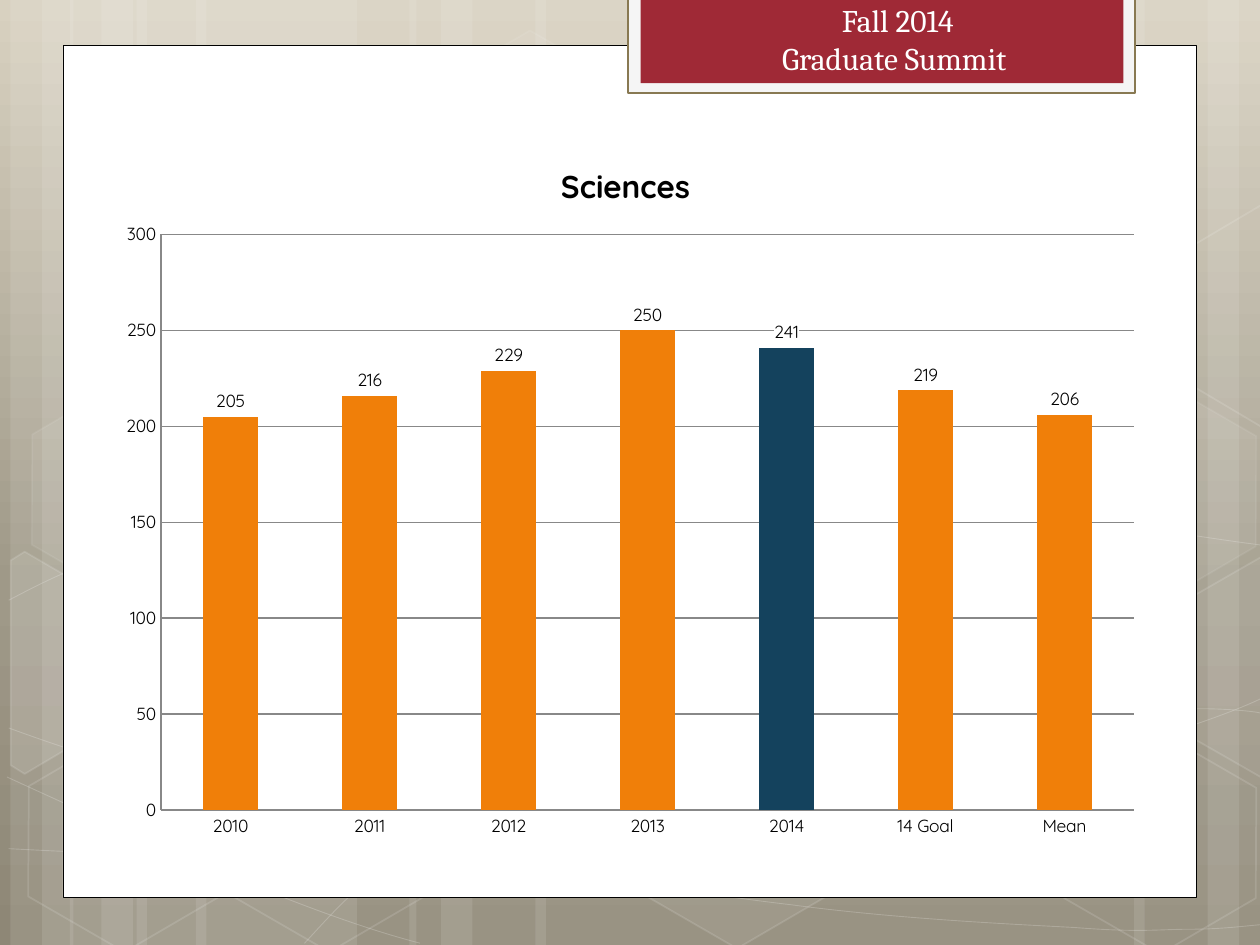
import copy
import math
from dataclasses import dataclass

import pptx
import pptx.chart.data
import pptx.dml.color
import pptx.enum.chart
import pptx.enum.shapes
import pptx.enum.text
import pptx.oxml
import pptx.oxml.ns
import pptx.util

Pt = pptx.util.Pt
qn = pptx.oxml.ns.qn
SHAPES = pptx.enum.shapes.MSO_SHAPE


@dataclass(frozen=True)
class Theme:
    white: str = "FFFFFF"
    black: str = "000000"
    frame: str = "F5F5F5"
    frame_line: str = "887952"
    ribbon: str = "9F2936"
    bar: str = "F07F09"
    highlight: str = "14425D"
    grid: str = "888888"
    backdrop: tuple = ((0, "D8D1C0"), (0.62, "9F9988"), (1, "8E8776"))
    heading_font: str = "Cambria"
    chart_font: str = "Quicksand"
    heading_size: int = 18
    chart_size: int = 10


THEME = Theme()
TILT = 30

# Backdrop geometry in points: left and width, turned by half a circle or not
BANDS = [(78, 126, 0), (6, 36, 0), (24, 60, 0), (112, 126, 0), (40, 36, 0), (58, 60, 0),
         (528, 126, 180), (690, 36, 180), (648, 60, 180),
         (306, 222, 0), (234, 36, 0), (252, 60, 0)]
# Each curve: a start point, then three points (control, control, end) per segment
CURVES = [
    [(5, 485), (44, 487), (83, 489), (137, 488), (191, 487), (258, 486), (330, 479),
     (402, 472), (504, 458), (570, 444), (636, 431), (703, 409), (725, 397)],
    [(5, 343), (26, 332), (47, 321), (87, 310), (128, 300), (186, 283), (250, 279),
     (314, 274), (392, 273), (471, 279), (550, 284), (682, 307), (725, 312)],
    [(4, 444), (91, 484), (178, 523), (240, 539)],
    [(5, 416), (27, 424), (50, 432), (92, 444), (134, 454), (197, 472), (257, 485),
     (317, 497), (392, 510), (452, 517), (512, 525), (576, 528), (614, 530),
     (652, 533), (662, 531), (680, 531), (699, 531), (712, 529), (725, 528)],
    [(174, 539), (187, 525), (200, 510), (217, 498), (235, 485), (259, 470), (279, 460),
     (300, 450), (312, 446), (338, 438), (364, 431), (413, 421), (438, 416),
     (464, 411), (467, 411), (490, 410), (512, 408), (547, 405), (572, 405),
     (597, 404), (638, 405), (638, 405), (654, 405), (670, 405), (686, 405),
     (699, 405), (711, 406), (718, 407), (722, 408), (722, 407), (724, 408)],
]
# left, top, fill opacity (None: no fill), line opacity
HEXAGONS = [(240, 26, 4, 8), (358, 424, 6, 12), (8, 426, None, 12),
            (10, 225, 7, 8), (125, 426, None, 12), (542, 326, 10, 12),
            (600, 427, None, 12), (600, 226, 7, 8)]
# Hexagons cut off by the slide edge: centre, corners as seen, fill opacity
CUT_HEXAGONS = [
    ((26, 385), [(6, 320), (14, 315), (69, 347), (68, 410), (14, 442), (6, 437)], 10),
    ((709, 374.5), [(667, 349), (721, 318), (726, 321), (726, 441), (721, 444),
                    (667, 413)], 4),
    ((709, 173.5), [(667, 149), (721, 117), (727, 121), (726, 241), (721, 244),
                    (667, 212)], None),
]


def rgb(value):
    return pptx.dml.color.RGBColor.from_string(value)


def set_opacity(parent, percent):
    color = parent.find(qn("a:solidFill")).find(qn("a:srgbClr"))
    color.append(color.makeelement(qn("a:alpha"), {"val": str(percent * 1000)}))


def style(shape, fill=None, line=None, width=1, fill_opacity=100, line_opacity=100):
    """Give a shape its fill and line; None leaves that part out."""
    shape.shadow.inherit = False
    properties = shape._element.spPr
    if fill and fill_opacity:
        shape.fill.solid()
        shape.fill.fore_color.rgb = rgb(fill)
        if fill_opacity < 100:
            set_opacity(properties, fill_opacity)
    else:
        shape.fill.background()
    if line:
        shape.line.color.rgb = rgb(line)
        shape.line.width = Pt(width)
        if line_opacity < 100:
            set_opacity(properties.find(qn("a:ln")), line_opacity)
    else:
        shape.line.fill.background()


def add_box(slide, kind, box, **look):
    shape = slide.shapes.add_shape(kind, *map(Pt, box))
    style(shape, **look)
    return shape


def add_outline(slide, points, close, **look):
    corners = [(Pt(x), Pt(y)) for x, y in points]
    builder = slide.shapes.build_freeform(*corners[0])
    builder.add_line_segments(corners[1:], close=close)
    shape = builder.convert_to_shape()
    style(shape, **look)
    return shape


def bend(shape):
    """Turn every three straight segments into one Bezier segment."""
    segments = list(shape._element.iter(qn("a:lnTo")))
    for first in range(0, len(segments), 3):
        curve = segments[first].makeelement(qn("a:cubicBezTo"), {})
        segments[first].addprevious(curve)
        for segment in segments[first:first + 3]:
            curve.append(segment[0])
            segment.getparent().remove(segment)


def turn_back(point, centre):
    cosine, sine = math.cos(math.radians(TILT)), math.sin(math.radians(TILT))
    x, y = point[0] - centre[0], point[1] - centre[1]
    return centre[0] + x * cosine + y * sine, centre[1] - x * sine + y * cosine


def set_backdrop(slide):
    fill = slide.background.fill
    fill.gradient()
    fill.gradient_angle = 270
    stop_list = next(slide._element.iter(qn("a:gsLst")))
    stop_list.append(copy.deepcopy(stop_list[-1]))
    for stop, (position, color) in zip(fill.gradient_stops, THEME.backdrop):
        stop.position = position
        stop.color.rgb = rgb(color)


def add_backdrop_pattern(slide):
    white = THEME.white
    for left, width, rotation in BANDS:
        band = add_box(slide, SHAPES.RECTANGLE, (left, 0, width, 540),
                       fill=white, fill_opacity=10)
        band.rotation = rotation
    for points in CURVES:
        bend(add_outline(slide, points, False, line=white, width=0.5, line_opacity=20))
    for left, top, opacity, line_opacity in HEXAGONS:
        hexagon = add_box(slide, SHAPES.HEXAGON, (left, top, 126, 109.5), fill=white,
                          fill_opacity=opacity, line=white, line_opacity=line_opacity)
        hexagon.adjustments[0] = 0.285
        hexagon.rotation = TILT
    for centre, corners, opacity in CUT_HEXAGONS:
        upright = [turn_back(corner, centre) for corner in corners]
        cut_hexagon = add_outline(slide, upright, True, fill=white, fill_opacity=opacity,
                                  line=white, line_opacity=12)
        cut_hexagon.rotation = TILT


def add_heading(slide, lines):
    text_frame = slide.shapes.add_textbox(Pt(378), Pt(-3), Pt(270), Pt(51)).text_frame
    text_frame.word_wrap = True
    text_frame.text = "\n".join(lines)
    for paragraph in text_frame.paragraphs:
        paragraph.alignment = pptx.enum.text.PP_ALIGN.CENTER
        font = paragraph.runs[0].font
        font.name, font.size = THEME.heading_font, Pt(THEME.heading_size)
        font.color.rgb = rgb(THEME.white)


def place_plot(chart, width, height, box):
    """Put the inner plot area at a box given in points within the chart."""
    area = chart._chartSpace.chart.plotArea
    for old in area.findall(qn("c:layout")):
        area.remove(old)
    values = "".join(f'<c:{key} val="{value / whole}"/>' for key, value, whole
                     in zip("xywh", box, (width, height, width, height)))
    area.insert(0, pptx.oxml.parse_xml(
        f'<c:layout {pptx.oxml.ns.nsdecls("c")}><c:manualLayout>'
        '<c:layoutTarget val="inner"/><c:xMode val="edge"/><c:yMode val="edge"/>'
        f'{values}</c:manualLayout></c:layout>'))


def add_score_chart(slide):
    data = pptx.chart.data.CategoryChartData()
    data.categories = ["2010", "2011", "2012", "2013", "2014", "14 Goal", "Mean"]
    data.add_series("Series 1", (205, 216, 229, 250, 241, 219, 206))
    width, height = 600, 408
    chart = slide.shapes.add_chart(
        pptx.enum.chart.XL_CHART_TYPE.COLUMN_CLUSTERED,
        Pt(60), Pt(78), Pt(width), Pt(height), data).chart
    chart.has_legend = False
    chart.font.name, chart.font.size = THEME.chart_font, Pt(THEME.chart_size)
    chart.font.color.rgb = rgb(THEME.black)
    place_plot(chart, width, height, (32, 56, 556, 329))

    # Title
    chart.has_title = True
    title_frame = chart.chart_title.text_frame
    title_frame.text = "Sciences "
    font = title_frame.paragraphs[0].runs[0].font
    font.name, font.size, font.bold = THEME.chart_font, Pt(THEME.heading_size), True
    font.color.rgb = rgb(THEME.black)

    # Axes
    value_axis = chart.value_axis
    value_axis.minimum_scale, value_axis.maximum_scale, value_axis.major_unit = 0, 300, 50
    for axis in (chart.category_axis, value_axis):
        axis.major_tick_mark = pptx.enum.chart.XL_TICK_MARK.NONE
        axis.format.line.color.rgb = rgb(THEME.grid)
    value_axis.major_gridlines.format.line.color.rgb = rgb(THEME.grid)

    # Columns and their labels
    plot = chart.plots[0]
    plot.gap_width, plot.vary_by_categories = 150, False
    series = plot.series[0]
    for part, color in ((series, THEME.bar), (series.points[4], THEME.highlight)):
        part.format.fill.solid()
        part.format.fill.fore_color.rgb = rgb(color)
    labels = series.data_labels
    labels.show_value = True
    labels.position = pptx.enum.chart.XL_LABEL_POSITION.OUTSIDE_END
    labels.font.size = Pt(THEME.chart_size)
    labels._element.find(qn("c:txPr")).addprevious(pptx.oxml.parse_xml(
        f'<c:spPr {pptx.oxml.ns.nsdecls("c", "a")}><a:solidFill>'
        f'<a:srgbClr val="{THEME.white}"/></a:solidFill></c:spPr>'))


def main():
    presentation = pptx.Presentation()
    presentation.slide_width, presentation.slide_height = Pt(720), Pt(540)
    slide = presentation.slides.add_slide(presentation.slide_layouts[6])

    # Backdrop
    set_backdrop(slide)
    add_backdrop_pattern(slide)

    # White panel and framed ribbon
    add_box(slide, SHAPES.RECTANGLE, (36, 26, 648, 487),
            fill=THEME.white, line=THEME.black, width=0.5)
    add_box(slide, SHAPES.RECTANGLE, (359, -1.5, 289.5, 54.5),
            fill=THEME.frame, line=THEME.frame_line, width=1.25)
    add_box(slide, SHAPES.RECTANGLE, (366, -1.5, 276, 49), fill=THEME.ribbon)

    # Content
    add_heading(slide, ["Fall 2014", "Graduate Summit "])
    add_score_chart(slide)
    presentation.save("out.pptx")


if __name__ == "__main__":
    main()
